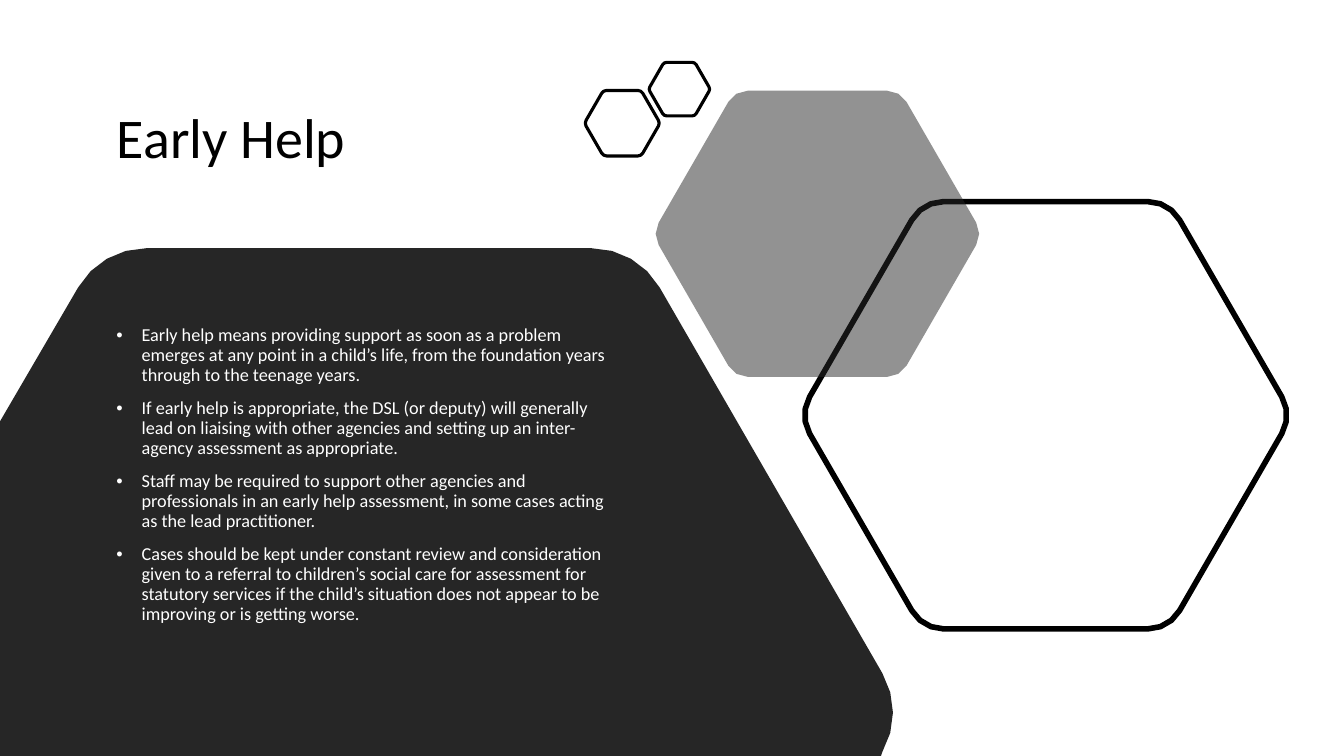
from dataclasses import dataclass
from math import cos, radians, sin, sqrt

from lxml import etree
from pptx import Presentation
from pptx.dml.color import RGBColor
from pptx.enum.text import MSO_ANCHOR, MSO_AUTO_SIZE, PP_ALIGN
from pptx.oxml.ns import qn
from pptx.util import Pt

LEFT = PP_ALIGN.LEFT
TOP, MIDDLE = MSO_ANCHOR.TOP, MSO_ANCHOR.MIDDLE
NO_AUTOFIT = MSO_AUTO_SIZE.NONE

FONT = "Calibri"
BLACK, WHITE, CHARCOAL = "000000", "FFFFFF", "262626"
WIDTH, HEIGHT = 960, 540

BULLETS = (
    "Early help means providing support as soon as a problem emerges at any point in a child’s life, "
    "from the foundation years through to the teenage years.",
    "If early help is appropriate, the DSL (or deputy) will generally lead on liaising with other agencies "
    "and setting up an inter-agency assessment as appropriate.",
    "Staff may be required to support other agencies and professionals in an early help assessment, "
    "in some cases acting as the lead practitioner.",
    "Cases should be kept under constant review and consideration given to a referral to children’s social care "
    "for assessment for statutory services if the child’s situation does not appear to be improving "
    "or is getting worse.",
)


@dataclass(frozen=True)
class Hexagon:
    cx: float
    cy: float
    half_height: float
    corner_radius: float
    fill: str | None = None
    alpha: int = 100
    line_width: float = 0
    arc_segments: int = 2
    corners: tuple[int, ...] = (0, -60, -120, -180, -240, -300)
    closing: tuple[tuple[float, float], ...] = ()


PANEL = Hexagon(263.5, 509, 331.7, 56.1, fill=CHARCOAL, arc_segments=4, corners=(0, -60, -120),
                closing=((0, 301), (0, HEIGHT), (629.3, HEIGHT)))
LARGE = Hexagon(747, 296.6, 152.6, 26.2, line_width=4, arc_segments=3)
GREY = Hexagon(583.9, 167, 102.2, 15.9, fill=CHARCOAL, alpha=50)
SMALL_PAIR = (
    Hexagon(444.5, 88, 23.4, 4.1, line_width=2.25),
    Hexagon(485.3, 63.7, 19.1, 3.2, line_width=2.25),
)


def color(value: str) -> RGBColor:
    return RGBColor.from_string(value)


def outline(h: Hexagon) -> list[tuple[int, int]]:
    reach = (h.half_height - h.corner_radius) * 2 / sqrt(3)
    points = []
    for corner in h.corners:
        x = h.cx + reach * cos(radians(corner))
        y = h.cy + reach * sin(radians(corner))
        for i in range(h.arc_segments + 1):
            angle = radians(corner + 30 - 60 * i / h.arc_segments)
            points.append((x + h.corner_radius * cos(angle), y + h.corner_radius * sin(angle)))
    return [(Pt(x), Pt(y)) for x, y in (*points, *h.closing)]


def draw_hexagon(shapes, h: Hexagon):
    points = outline(h)
    builder = shapes.build_freeform(*points[0])
    builder.add_line_segments(points[1:], close=True)
    sp = builder.convert_to_shape()
    sp.shadow.inherit = False
    if h.fill:
        sp.fill.solid()
        sp.fill.fore_color.rgb = color(h.fill)
        if h.alpha < 100:
            clr = sp.element.spPr.find(qn("a:solidFill")).find(qn("a:srgbClr"))
            etree.SubElement(clr, qn("a:alpha")).set("val", str(h.alpha * 1000))
    else:
        sp.fill.background()
    if h.line_width:
        sp.line.color.rgb = color(BLACK)
        sp.line.width = Pt(h.line_width)
    else:
        sp.line.fill.background()
    return sp


def place_text(sp, box: tuple[float, ...], lines: tuple[str, ...], size: float, rgb: str, anchor) -> None:
    sp.left, sp.top, sp.width, sp.height = (Pt(v) for v in box)
    tf = sp.text_frame
    tf.text = "\n".join(lines)
    tf.word_wrap = True
    tf.auto_size = NO_AUTOFIT
    tf.vertical_anchor = anchor
    for p in tf.paragraphs:
        p.alignment = LEFT
        p.line_spacing = 0.9
        p.font.name = FONT
        p.font.size = Pt(size)
        p.font.color.rgb = color(rgb)


def main() -> None:
    prs = Presentation()
    prs.slide_width, prs.slide_height = Pt(WIDTH), Pt(HEIGHT)
    s = prs.slides.add_slide(prs.slide_layouts[1])
    title, body = s.placeholders

    place_text(title, (76.3, 35.3, 337, 129.6), ("Early Help",), 40, BLACK, MIDDLE)
    for h in (PANEL, LARGE, GREY):
        draw_hexagon(s.shapes, h)
    s.shapes.add_group_shape([draw_hexagon(s.shapes, h) for h in SMALL_PAIR])

    place_text(body, (76, 229.3, 373.7, 243.4), BULLETS, 13, WHITE, TOP)
    for p in body.text_frame.paragraphs:
        p.space_before = Pt(10)
        pPr = p._p.get_or_add_pPr()
        pPr.set("marL", str(Pt(18)))
        pPr.set("indent", str(Pt(-18)))
    body.element.getparent().append(body.element)

    prs.save("out.pptx")


if __name__ == "__main__":
    main()
